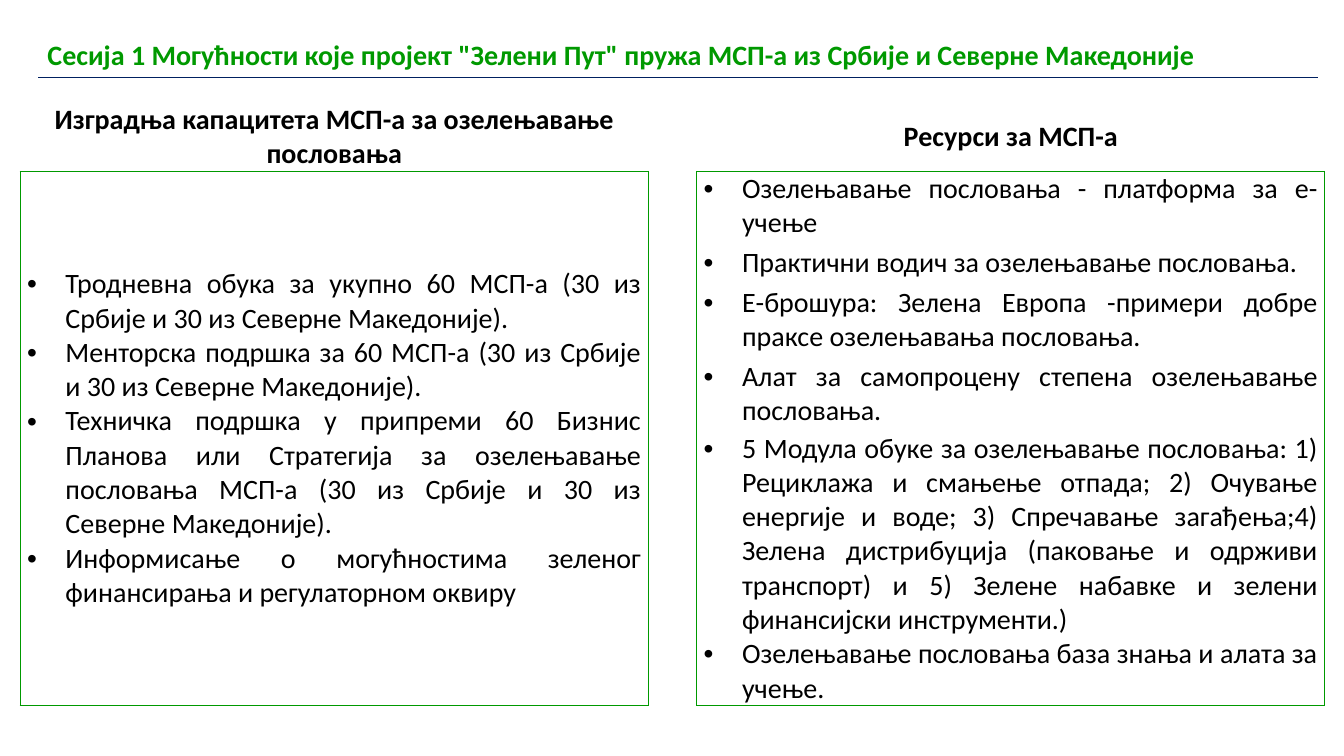
from lxml.etree import SubElement
from pptx import Presentation
from pptx.dml.color import RGBColor
from pptx.enum.text import MSO_ANCHOR as Anchor, PP_ALIGN as Align
from pptx.oxml.ns import qn
from pptx.util import Inches, Pt

COLORS = {"green": "009900", "black": "000000", "navy": "002060", "white": "FFFFFF"}
SIDES = {"left": "a:lnL", "right": "a:lnR", "top": "a:lnT", "bottom": "a:lnB"}
BOXED = dict.fromkeys(SIDES, "green")

HEADINGS = ["Изградња капацитета МСП-а за озелењавање пословања", "Ресурси за МСП-а"]
CAPACITY = [
    "Тродневна обука за укупно 60 МСП-а (30 из Србије и 30 из Северне Македоније).",
    "Менторска подршка за 60 МСП-а (30 из Србије и 30 из Северне Македоније).",
    "Техничка подршка у припреми 60 Бизнис Планова или Стратегија за озелењавање "
    "пословања МСП-а (30 из Србије и 30 из Северне Македоније).",
    "Информисање о могућностима зеленог финансирања и регулаторном оквиру",
]
RESOURCES = [
    "Озелењавање пословања - платформа за е-учење",
    "Практични водич за озелењавање пословања.",
    "Е-брошура: Зелена Европа -примери добре праксе озелењавања пословања.",
    "Алат за самопроцену степена озелењавање пословања.",
    "5 Модула обуке за озелењавање пословања: 1) Рециклажа и смањење отпада; "
    "2) Очување енергије и воде; 3) Спречавање загађења;4) Зелена дистрибуција "
    "(паковање и одрживи транспорт) и 5) Зелене набавке и зелени финансијски инструменти.)",
    "Озелењавање пословања база знања и алата за учење.",
]
SPACED_RESOURCES = 4


class SlideBuilder:
    """Holds the text style and the slide; lengths are percent of the slide."""

    font, size, indent = "Calibri", Pt(20), Inches(0.38)

    def __init__(self, deck):
        self.width, self.height = deck.slide_width, deck.slide_height
        self.slide = deck.slides.add_slide(deck.slide_layouts[6])

    def x(self, share):
        return int(self.width * share / 100)

    def y(self, share):
        return int(self.height * share / 100)

    def table(self, left, top, columns, rows):
        frame = self.slide.shapes.add_table(
            len(rows), len(columns), self.x(left), self.y(top),
            self.x(sum(columns)), self.y(sum(rows)))
        grid = frame.table
        grid.first_row = grid.horz_banding = False
        for column, share in zip(grid.columns, columns):
            column.width = self.x(share)
        for row, share in zip(grid.rows, rows):
            row.height = self.y(share)
        return grid

    def borders(self, cell, colors):
        properties = cell._tc.get_or_add_tcPr()
        for side, tag in SIDES.items():
            line = SubElement(properties, qn(tag), w=str(Pt(1)))
            if side in colors:
                fill = SubElement(line, qn("a:solidFill"))
                SubElement(fill, qn("a:srgbClr"), val=COLORS[colors[side]])
            else:
                SubElement(line, qn("a:noFill"))
        cell.fill.background()

    def text(self, cell, lines, color="black", bold=False, align=Align.LEFT):
        cell.text_frame.text = "\n".join(lines)
        for paragraph in cell.text_frame.paragraphs:
            paragraph.alignment = align
            for run in paragraph.runs:
                run.font.name, run.font.size, run.font.bold = self.font, self.size, bold
                run.font.color.rgb = RGBColor.from_string(COLORS[color])

    def tighten(self, cell):
        cell.vertical_anchor = Anchor.MIDDLE
        cell.margin_left = cell.margin_right = Inches(0.07)
        cell.margin_top = cell.margin_bottom = 0

    def bullets(self, cell, lines, spaced=0):
        self.text(cell, lines, align=Align.JUSTIFY)
        for number, paragraph in enumerate(cell.text_frame.paragraphs):
            paragraph.space_before = paragraph.space_after = Pt(2 if number < spaced else 0)
            properties = paragraph._p.get_or_add_pPr()
            properties.set("marL", str(self.indent))
            properties.set("indent", str(-self.indent))
            SubElement(properties, qn("a:buFont"), typeface="Arial")
            SubElement(properties, qn("a:buChar"), char="•")


def main():
    deck = Presentation()
    deck.slide_width, deck.slide_height = Inches(13.33), Inches(7.5)
    builder = SlideBuilder(deck)

    # Session title, underlined by its cell border
    session = builder.table(2.78, 4.4, [95.35], [5.73]).cell(0, 0)
    builder.borders(session, dict.fromkeys(SIDES, "white") | {"bottom": "navy"})
    builder.text(
        session,
        ['Сесија 1 Могућности које пројект "Зелени Пут" пружа МСП-а из Србије и Северне Македоније'],
        color="green", bold=True)

    # Two topics with a gap column between them
    topics = builder.table(1.5, 13.6, [46.74, 3.6, 46.74], [9.07, 70.67])
    for cell in topics.iter_cells():
        builder.tighten(cell)
    for column, heading, points, spaced in zip(
            (0, 2), HEADINGS, (CAPACITY, RESOURCES), (0, SPACED_RESOURCES)):
        head, body = topics.cell(0, column), topics.cell(1, column)
        builder.borders(head, {"bottom": "green"})
        builder.text(head, [heading], bold=True, align=Align.CENTER)
        builder.borders(body, BOXED)
        builder.bullets(body, points, spaced)
    builder.borders(topics.cell(0, 1), {})
    builder.borders(topics.cell(1, 1), {"left": "green", "right": "green"})

    deck.save("out.pptx")


if __name__ == "__main__":
    main()
